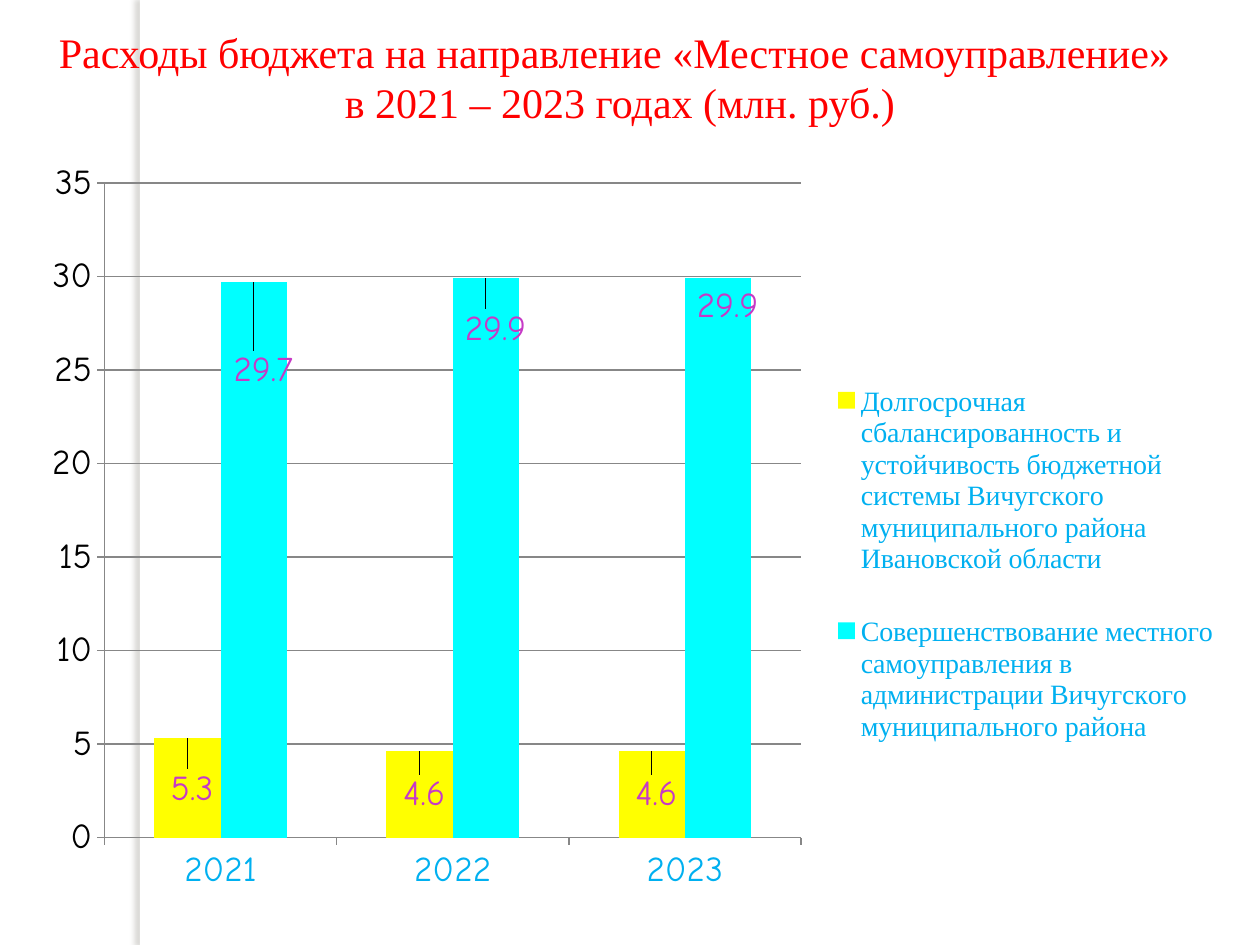
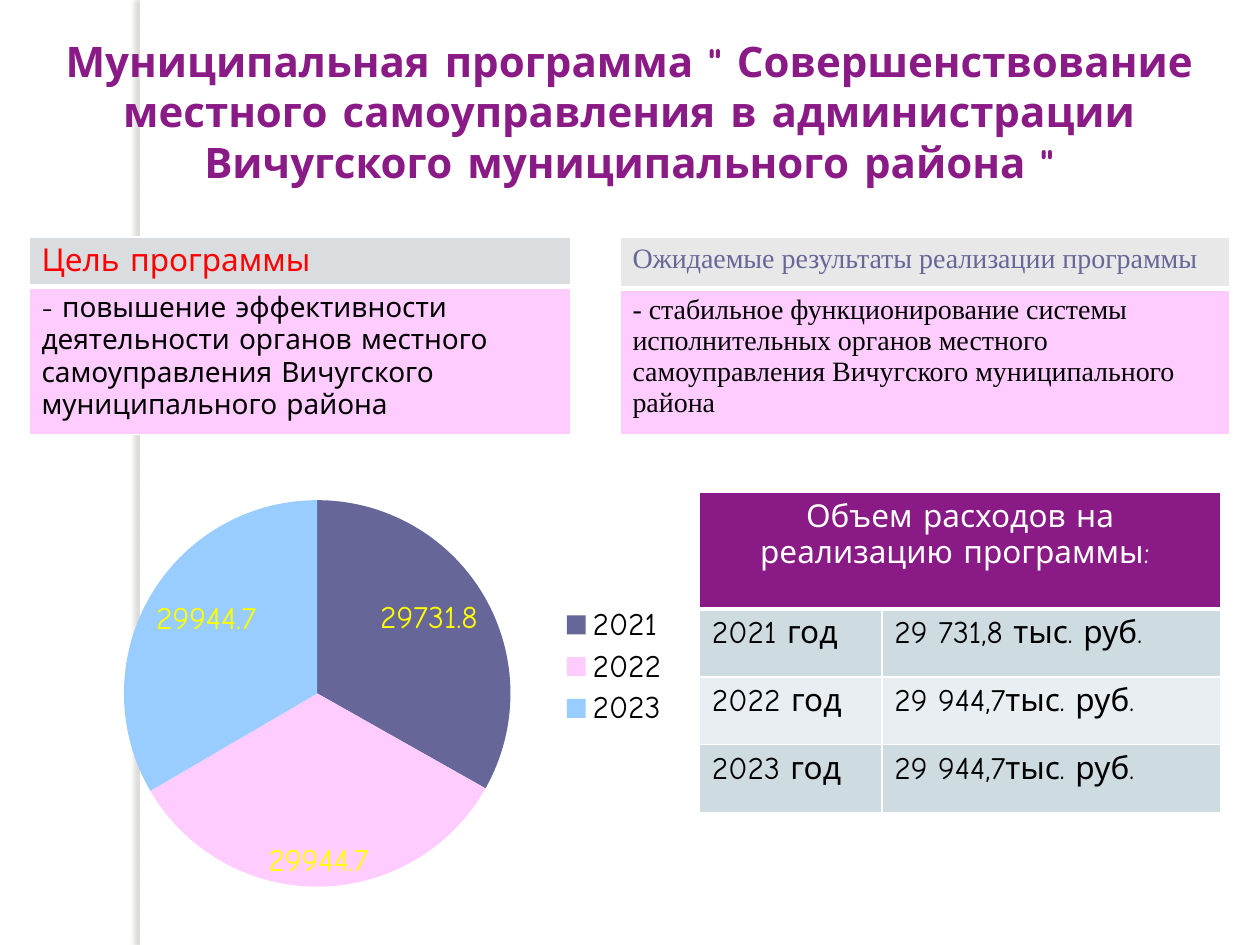
from pptx import Presentation
from pptx import util as u
from pptx.chart.data import CategoryChartData
from pptx.dml.color import RGBColor
from pptx.enum import chart as ch, shapes, text
from pptx.oxml import parse_xml
from pptx.oxml.ns import nsdecls, qn

HUE = {
    "white": "FFFFFF", "black": "000000", "red": "FF0000", "plum": "8A1A85",
    "sky": "00B0F0", "cyan": "00FFFF", "yellow": "FFFF00", "mauve": "C63AC6",
    "pink": "FFCCFF", "slate": "666699", "blue": "99CCFF", "line": "878787",
    "grey": "DADDE0", "pale": "E8E8E8", "mist": "CEDCE1", "ice": "E8EEF1",
}
COMIC, TIMES, CABIN = "Comic Neue", "Times New Roman", "Cabin"

deck = Presentation()
deck.slide_width, deck.slide_height = u.Inches(10), u.Inches(7.5)
W, H = deck.slide_width, deck.slide_height

# Places as percent of slide width and height
SPOT = {
    "band": (11.1, 0, 0.8, 100),
    "title 1": (0, 2.13, 98.4, 10.4),
    "title 2": (2.3, 3.07, 95.3, 12.13),
    "bars": (2.3, 15.6, 95.3, 80.27),
    "pie": (2.3, 42.67, 51.6, 55.2),
    "goal": (2.3, 25.07, 43, 20.93),
    "result": (49.2, 25.07, 48.4, 20.93),
    "costs": (55.5, 52.13, 41.4, 33.87),
}
SPOT = {key: [round(part * full / 100) for part, full in zip(spot, (W, H, W, H))]
        for key, spot in SPOT.items()}


def style(font, hue, **form):
    font.color.rgb = RGBColor.from_string(HUE[hue])
    for key, val in form.items():
        setattr(font, key, u.Pt(val) if key == "size" else val)


def place(node, index, **vals):
    """Give a chart part a manual layout."""
    for old in node.findall(qn("c:layout")):
        node.remove(old)
    tags = "".join(f'<c:{key} val="{val}"/>' for key, val in vals.items())
    node.insert(index, parse_xml(
        f'<c:layout {nsdecls("c")}><c:manualLayout>{tags}</c:manualLayout></c:layout>'))


# Slides and their titles
frame = deck.slide_layouts[5]
TITLES = [
    ("title 1", ["Расходы бюджета на направление «Местное самоуправление» ",
                 "в 2021 – 2023 годах (млн. руб.)"],
     dict(hue="red", name=TIMES, bold=False)),
    ("title 2", ['Муниципальная программа " Совершенствование местного самоуправления '
                 'в администрации Вичугского муниципального района "'],
     dict(hue="plum", name=COMIC, bold=True)),
]
pages = []
for key, lines, form in TITLES:
    page = deck.slides.add_slide(frame)
    title = page.shapes.title
    title.left, title.top, title.width, title.height = SPOT[key]
    body = title.text_frame
    body.text = "\n".join(lines)
    for name, val in dict(word_wrap=True, auto_size=text.MSO_AUTO_SIZE.NONE,
                          vertical_anchor=text.MSO_ANCHOR.TOP).items():
        setattr(body, name, val)
    for para in body.paragraphs:
        para.alignment = text.PP_ALIGN.CENTER
        style(para.runs[0].font, size=24, **form)
    pages.append(page)

# Shared band with a soft shadow, moved to the layout
band = pages[0].shapes.add_shape(shapes.MSO_SHAPE.RECTANGLE, *SPOT["band"])
band.fill.solid()
band.fill.fore_color.rgb = RGBColor.from_string(HUE["white"])
band.line.fill.background()
band.element.spPr.append(parse_xml(
    f'<a:effectLst {nsdecls("a")}><a:outerShdw blurRad="{u.Pt(3)}" dist="{u.Pt(3)}" '
    'dir="10800000" rotWithShape="0"><a:srgbClr val="736F63"><a:alpha val="25000"/>'
    '</a:srgbClr></a:outerShdw></a:effectLst>'))
frame.shapes.element.insert(2, band.element)

# Charts: data, fonts, plot and legend areas
YEARS = ["2021", "2022", "2023"]
CHARTS = [
    dict(page=0, spot="bars", kind=ch.XL_CHART_TYPE.COLUMN_CLUSTERED,
         rows=[("Долгосрочная сбалансированность и устойчивость бюджетной системы "
                "Вичугского муниципального района Ивановской области", [5.3, 4.6, 4.6]),
               ("Совершенствование местного самоуправления в администрации "
                "Вичугского муниципального района", [29.7, 29.9, 29.9])],
         font=dict(hue="black", size=20, name=COMIC),
         key=dict(hue="sky", size=16, name=TIMES),
         label=dict(hue="mauve", size=20, name=COMIC),
         label_at=ch.XL_LABEL_POSITION.OUTSIDE_END,
         plot=dict(x=0.063, y=0.047, w=0.58, h=0.863),
         legend=dict(x=0.665, y=0.26, w=0.33, h=0.58)),
    dict(page=1, spot="pie", kind=ch.XL_CHART_TYPE.PIE,
         rows=[("Series 1", [29731.8, 29944.7, 29944.7])],
         font=dict(hue="black", size=18, name=CABIN),
         key=dict(hue="black", size=18, name=COMIC),
         label=dict(hue="yellow", size=18, name=COMIC),
         label_at=ch.XL_LABEL_POSITION.INSIDE_END,
         plot=dict(x=0.146, y=0.186, w=0.595, h=0.741),
         legend=dict(x=0.81, y=0.38, w=0.18, h=0.25)),
]
made = []
for item in CHARTS:
    data = CategoryChartData()
    data.categories = YEARS
    for name, vals in item["rows"]:
        data.add_series(name, vals)
    chart = pages[item["page"]].shapes.add_chart(item["kind"], *SPOT[item["spot"]], data).chart
    chart.has_title = False
    style(chart.font, **item["font"])
    chart.has_legend = True
    chart.legend.position = ch.XL_LEGEND_POSITION.RIGHT
    chart.legend.include_in_layout = False
    style(chart.legend.font, **item["key"])
    space = dict(xMode="edge", yMode="edge")
    place(chart.element.find(".//" + qn("c:plotArea")), 0,
          layoutTarget="inner", **space, **item["plot"])
    place(chart.element.find(".//" + qn("c:legend")), 1, **space, **item["legend"])
    for row in chart.plots[0].series:
        tags = row.data_labels
        tags.show_value = True
        tags.position = item["label_at"]
        style(tags.font, **item["label"])
    made.append(chart)
bars, pie = made

# Bars: colours, label shifts and axes
plot = bars.plots[0]
plot.gap_width, plot.overlap, plot.vary_by_categories = 150, 0, False
SHIFTS = [("yellow", 0.004, [0.1, 0.09, 0.09]), ("cyan", 0.008, [0.15, 0.1, 0.07])]
for row, (hue, right, drops) in zip(plot.series, SHIFTS):
    row.format.fill.solid()
    row.format.fill.fore_color.rgb = RGBColor.from_string(HUE[hue])
    for spot, drop in enumerate(drops):
        tag = row.points[spot].data_label
        tag.position = ch.XL_LABEL_POSITION.OUTSIDE_END
        style(tag.font, **CHARTS[0]["label"])
    for node, drop in zip(row.data_labels._element.findall(qn("c:dLbl")), drops):
        place(node, 1, x=right, y=drop)
years, scale = bars.category_axis, bars.value_axis
for key, val in dict(minimum_scale=0, maximum_scale=35, major_unit=5,
                     has_major_gridlines=True).items():
    setattr(scale, key, val)
for part in (years, scale, scale.major_gridlines):
    part.format.line.color.rgb = RGBColor.from_string(HUE["line"])
    part.format.line.width = u.Pt(0.75)
for axis, hue in ((years, "sky"), (scale, "black")):
    axis.major_tick_mark = ch.XL_TICK_MARK.OUTSIDE
    style(axis.tick_labels.font, hue, size=20, name=COMIC)

# Pie: slice colours
for spot, hue in enumerate(("slate", "pink", "blue")):
    fill = pie.plots[0].series[0].points[spot].format.fill
    fill.solid()
    fill.fore_color.rgb = RGBColor.from_string(HUE[hue])

# Tables: each row is its share of height, fill, font and words
big, small = dict(size=18, name=COMIC), dict(size=16, name=COMIC)
serif = dict(size=16, name=TIMES)
sums = ["29 731,8 тыс. руб.", "29 944,7тыс. руб.", "29 944,7тыс. руб."]
TABLES = [
    ("goal", [1], [
        (0.25, "grey", dict(hue="red", **big), ["Цель программы"]),
        (0.75, "pink", dict(hue="black", **small),
         ["- повышение эффективности деятельности органов местного самоуправления "
          "Вичугского муниципального района"])]),
    ("result", [1], [
        (0.26, "pale", dict(hue="slate", **serif), ["Ожидаемые результаты реализации программы"]),
        (0.74, "pink", dict(hue="black", **serif),
         ["- стабильное функционирование системы исполнительных органов местного "
          "самоуправления Вичугского муниципального района"])]),
    ("costs", [0.35, 0.65], [
        (0.364, "plum", dict(hue="white", **big), ["Объем расходов на реализацию программы: ", ""]),
        *[(0.212, hue, dict(hue="black", **big), [f"{year} год", cost])
          for year, cost, hue in zip(YEARS, sums, ("mist", "ice", "mist"))]]),
]
for key, cols, rows in TABLES:
    x, y, wide, high = SPOT[key]
    grid = pages[1].shapes.add_table(len(rows), len(cols), x, y, wide, high).table
    for col, share in zip(grid.columns, cols):
        col.width = round(wide * share)
    for r, (share, hue, form, words) in enumerate(rows):
        grid.rows[r].height = round(high * share)
        for c, word in enumerate(words):
            cell = grid.cell(r, c)
            edges = cell._tc.get_or_add_tcPr()
            for side in "LRTB":
                thick = 3 if (r, side) in ((0, "B"), (1, "T")) else 1
                edges.append(parse_xml(
                    f'<a:ln{side} {nsdecls("a")} w="{u.Pt(thick)}"><a:solidFill>'
                    f'<a:srgbClr val="{HUE["white"]}"/></a:solidFill></a:ln{side}>'))
            cell.fill.solid()
            cell.fill.fore_color.rgb = RGBColor.from_string(HUE[hue])
            if word:
                cell.text = word
                style(cell.text_frame.paragraphs[0].runs[0].font, bold=False, **form)
    if len(cols) > 1:
        grid.cell(0, 0).merge(grid.cell(0, 1))
        grid.cell(0, 0).text_frame.paragraphs[0].alignment = text.PP_ALIGN.CENTER

deck.save("out.pptx")
